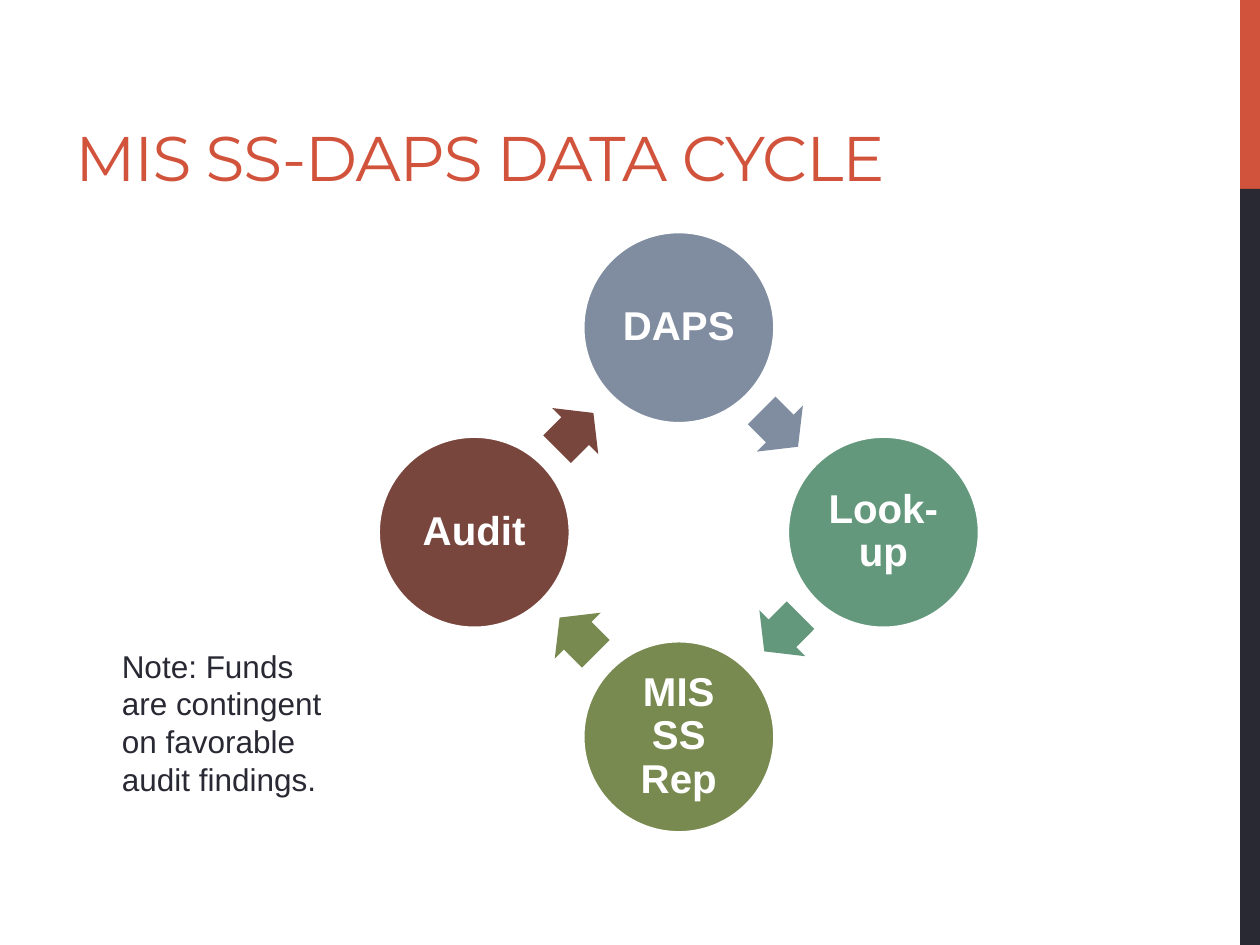
import math
from dataclasses import dataclass

from pptx import Presentation
from pptx.dml.color import RGBColor
from pptx.enum import shapes, text
from pptx.util import Pt


@dataclass(frozen=True)
class Theme:
    accent: str = "D2533C"
    dark: str = "292934"
    white: str = "FFFFFF"
    heading_font: str = "Montserrat"
    body_font: str = "Arial"
    title_size: float = 36
    stage_size: float = 23
    note_size: float = 18


THEME = Theme()
STAGES = [
    ("DAPS", "808DA0"),
    ("Look-up", "64987C"),
    ("MIS SS Rep", "788A50"),
    ("Audit", "79463D"),
]


def write_text(shape, content, *, size, color, font=THEME.body_font, bold=False,
               align=text.PP_ALIGN.LEFT, anchor=text.MSO_ANCHOR.TOP,
               line_spacing=None, tracking=None, inset=None):
    """Fill the shape with one paragraph; tracking is in hundredths of a point."""
    frame = shape.text_frame
    frame.word_wrap = True
    frame.vertical_anchor = anchor
    if inset is not None:
        frame.margin_left = frame.margin_right = Pt(inset)
        frame.margin_top = frame.margin_bottom = Pt(inset)
    paragraph = frame.paragraphs[0]
    paragraph.alignment = align
    if line_spacing:
        paragraph.line_spacing = line_spacing
    run = paragraph.add_run()
    run.text = content
    run.font.name = font
    run.font.size = Pt(size)
    run.font.bold = bold
    run.font.color.rgb = RGBColor.from_string(color)
    if tracking is not None:
        run._r.get_or_add_rPr().set("spc", str(tracking))


def add_filled(slide, kind, left, top, width, height, fill, line=None):
    shape = slide.shapes.add_shape(kind, Pt(left), Pt(top), Pt(width), Pt(height))
    shape.shadow.inherit = False
    shape.fill.solid()
    shape.fill.fore_color.rgb = RGBColor.from_string(fill)
    if line:
        shape.line.color.rgb = RGBColor.from_string(line)
        shape.line.width = Pt(2.25)
    else:
        shape.line.fill.background()
    return shape


def add_side_band(slide, left, top, width, height):
    accent_height = height / 5
    rectangle = shapes.MSO_SHAPE.RECTANGLE
    add_filled(slide, rectangle, left, top, width, accent_height, THEME.accent)
    add_filled(slide, rectangle, left, top + accent_height, width,
               height - accent_height, THEME.dark)


def add_title(slide, left, top, width, height):
    box = slide.shapes.add_textbox(Pt(left), Pt(top), Pt(width), Pt(height))
    write_text(box, "MIS SS-DAPS DATA CYCLE", size=THEME.title_size, color=THEME.accent,
               font=THEME.heading_font, anchor=text.MSO_ANCHOR.BOTTOM, tracking=-60)


def add_cycle(slide, left, top, size, stages):
    """Place the stages clockwise from the top, each with an arrow to the next."""
    diameter = 110
    arrow_width, arrow_height = 29.3, 37.2
    arrow_setback = 1
    radius = (size - diameter) / 2
    center_x, center_y = left + size / 2, top + size / 2
    step = 360 / len(stages)
    arrow_radius = radius * math.cos(math.radians(step / 2))

    for index, (label, color) in enumerate(stages):
        angle = math.radians(index * step)
        x = center_x + radius * math.sin(angle)
        y = center_y - radius * math.cos(angle)
        circle = add_filled(slide, shapes.MSO_SHAPE.OVAL, x - diameter / 2,
                            y - diameter / 2, diameter, diameter, color, THEME.white)
        write_text(circle, label, size=THEME.stage_size, color=THEME.white, bold=True,
                   align=text.PP_ALIGN.CENTER, anchor=text.MSO_ANCHOR.MIDDLE,
                   line_spacing=0.9, inset=2.3)

        heading = (index + 0.5) * step
        angle = math.radians(heading)
        x = center_x + arrow_radius * math.sin(angle) - arrow_setback * math.cos(angle)
        y = center_y - arrow_radius * math.cos(angle) - arrow_setback * math.sin(angle)
        arrow = add_filled(slide, shapes.MSO_SHAPE.RIGHT_ARROW, x - arrow_width / 2,
                           y - arrow_height / 2, arrow_width, arrow_height, color)
        arrow.adjustments[0] = 0.6
        arrow.adjustments[1] = 0.5
        arrow.rotation = heading


def add_note(slide, left, top, width, height):
    box = slide.shapes.add_textbox(Pt(left), Pt(top), Pt(width), Pt(height))
    write_text(box, "Note: Funds are contingent on favorable audit findings.",
               size=THEME.note_size, color=THEME.dark)
    box.text_frame.auto_size = text.MSO_AUTO_SIZE.SHAPE_TO_FIT_TEXT


def main():
    presentation = Presentation()
    presentation.slide_width, presentation.slide_height = Pt(720), Pt(540)
    slide = presentation.slides.add_slide(presentation.slide_layouts[6])
    add_side_band(slide, 708.6, 0, 11.4, 540)
    add_title(slide, 36, 12, 600, 102.5)
    add_cycle(slide, 216, 132.2, 343.8, STAGES)
    add_note(slide, 62.5, 366, 132, 94.5)
    presentation.save("out.pptx")


if __name__ == "__main__":
    main()
